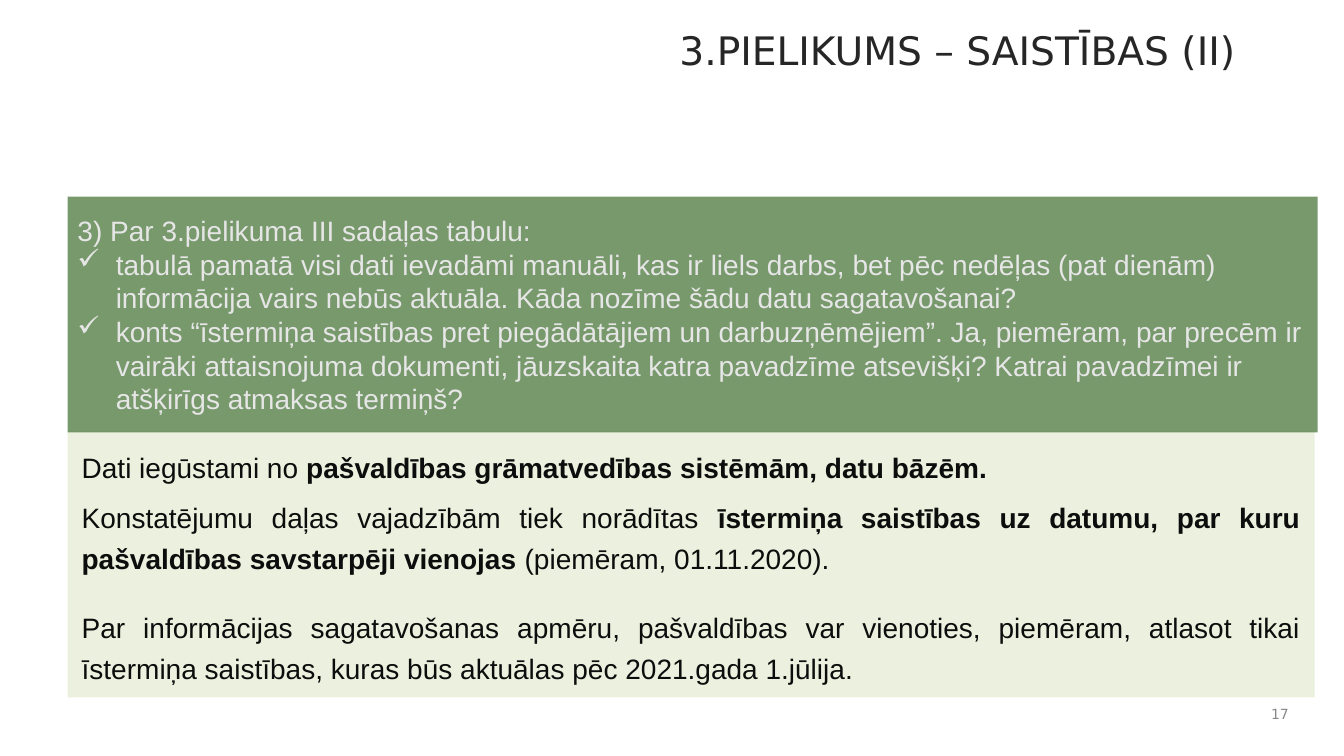
from lxml import etree
from pptx import Presentation
from pptx.dml.color import RGBColor
from pptx.enum import shapes, text
from pptx.oxml import ns
from pptx.util import Inches, Pt

ALIGN = text.PP_ALIGN
ANCHOR = text.MSO_ANCHOR


def color(value):
    return RGBColor.from_string(value)


def write(box, paragraphs, font, size, ink, align):
    """Fill a box; each paragraph is a list of parts, every second part bold."""
    frame = box.text_frame
    frame.word_wrap = True
    for index, parts in enumerate(paragraphs):
        para = frame.add_paragraph() if index else frame.paragraphs[0]
        para.alignment = align
        for position, part in enumerate(parts):
            span = para.add_run()
            span.text = part
            span.font.name = font
            span.font.size = Pt(size)
            span.font.bold = position % 2 == 1
            span.font.color.rgb = color(ink)
    return frame


deck = Presentation()
deck.slide_width = Inches(13.33)
deck.slide_height = Inches(7.5)
page = deck.slides.add_slide(deck.slide_layouts[6])

# Title and page number
captions = [
    ("3.PIELIKUMS – SAISTĪBAS (II)", (1.85, 0.21, 10.5, 0.9), 28, "262626", ANCHOR.TOP),
    ("17", (12.44, 6.92, 0.44, 0.33), 10, "898989", ANCHOR.MIDDLE),
]
for caption, place, size, ink, anchor in captions:
    box = page.shapes.add_textbox(*map(Inches, place))
    frame = write(box, [[caption]], "DejaVu Sans", size, ink, ALIGN.RIGHT)
    frame.vertical_anchor = anchor

# Answer and question panels
answer = [
    ["Dati iegūstami no ", "pašvaldības grāmatvedības sistēmām, datu bāzēm."],
    [
        "Konstatējumu daļas vajadzībām tiek norādītas ",
        "īstermiņa saistības uz datumu, par kuru pašvaldības savstarpēji vienojas",
        " (piemēram, 01.11.2020).",
    ],
    [
        "Par informācijas sagatavošanas apmēru, pašvaldības var vienoties, piemēram, "
        "atlasot tikai īstermiņa saistības, kuras būs aktuālas pēc 2021.gada 1.jūlija."
    ],
]
question = [
    ["3) Par 3.pielikuma III sadaļas tabulu:"],
    [
        "tabulā pamatā visi dati ievadāmi manuāli, kas ir liels darbs, bet pēc nedēļas "
        "(pat dienām) informācija vairs nebūs aktuāla. Kāda nozīme šādu datu sagatavošanai?"
    ],
    [
        "konts “īstermiņa saistības pret piegādātājiem un darbuzņēmējiem”. Ja, piemēram, "
        "par precēm ir vairāki attaisnojuma dokumenti, jāuzskaita katra pavadzīme atsevišķi? "
        "Katrai pavadzīmei ir atšķirīgs atmaksas termiņš?"
    ],
]
panels = [
    (answer, (0.67, 4.28, 12.37, 2.64), "EBF1DE", "0D0D0D", ALIGN.JUSTIFY),
    (question, (0.67, 1.95, 12.4, 2.34), "4A773C", "E6E6E6", ALIGN.LEFT),
]
frames = []
for paragraphs, place, fill, ink, align in panels:
    panel = page.shapes.add_shape(shapes.MSO_SHAPE.RECTANGLE, *map(Inches, place))
    panel.shadow.inherit = False
    panel.fill.solid()
    panel.fill.fore_color.rgb = color(fill)
    panel.line.fill.background()
    frame = write(panel, paragraphs, "Arial", 20, ink, align)
    frame.vertical_anchor = ANCHOR.MIDDLE
    frames.append(frame)
answer_frame, question_frame = frames

answer_frame.margin_left = answer_frame.margin_right = Inches(0.14)
answer_frame.margin_top = answer_frame.margin_bottom = Inches(0.14)
for para, gap in zip(answer_frame.paragraphs, (7, 21, 7)):
    para.line_spacing = 1.2
    para.space_after = Pt(gap)

for para in question_frame.paragraphs[1:]:
    properties = para._p.get_or_add_pPr()
    properties.set("marL", str(Inches(0.38)))
    properties.set("indent", str(-Inches(0.38)))
    etree.SubElement(properties, ns.qn("a:buChar"), char="✓")

# The question panel is the last one drawn; it is 75 % opaque
panel_color = panel._element.spPr.find(ns.qn("a:solidFill"))[0]
etree.SubElement(panel_color, ns.qn("a:alpha"), val="75000")

deck.save("out.pptx")
